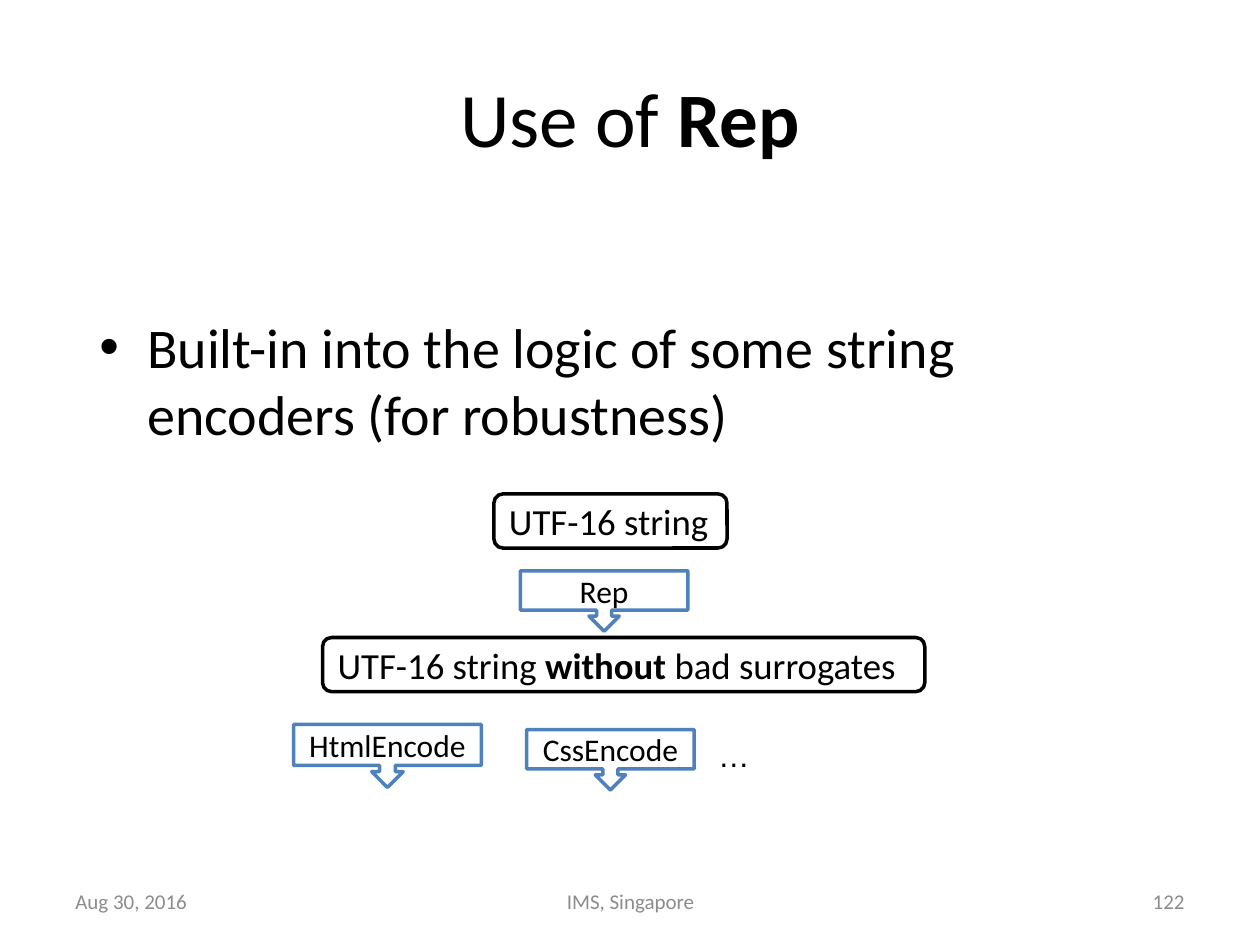
from dataclasses import dataclass

import pptx
import pptx.dml.color
import pptx.enum.shapes
import pptx.enum.text
import pptx.oxml
import pptx.oxml.ns
import pptx.util
from pptx.util import Inches

ALIGN = pptx.enum.text.PP_ALIGN
ANCHOR = pptx.enum.text.MSO_ANCHOR
SHAPE = pptx.enum.shapes.MSO_SHAPE
BLACK, GRAY, BLUE, WHITE = "000000", "8C8C8C", "4F81BD", "FFFFFF"


@dataclass
class Label:
    left: float
    top: float
    width: float
    height: float
    spans: list[tuple[str, bool]]
    size: float
    align: ALIGN = ALIGN.LEFT
    anchor: ANCHOR = ANCHOR.MIDDLE
    color: str = BLACK
    font: str = "Calibri"

    def bounds(self) -> list[pptx.util.Length]:
        return [Inches(value) for value in (self.left, self.top, self.width, self.height)]


def rgb(value: str) -> pptx.dml.color.RGBColor:
    return pptx.dml.color.RGBColor.from_string(value)


def write(box, label: Label):
    frame = box.text_frame
    frame.word_wrap = True
    frame.vertical_anchor = label.anchor
    para = frame.paragraphs[0]
    para.alignment = label.align
    para.font.name = label.font
    para.font.size = pptx.util.Pt(label.size)
    para.font.color.rgb = rgb(label.color)
    for text, bold in label.spans:
        span = para.add_run()
        span.text = text
        if bold:
            span.font.bold = True
    return para


def draw_text(page, label: Label):
    return write(page.shapes.add_textbox(*label.bounds()), label)


def draw_shape(page, kind: SHAPE, line: str, label: Label) -> None:
    box = page.shapes.add_shape(kind, *label.bounds())
    box.shadow.inherit = False
    box.fill.solid()
    box.fill.fore_color.rgb = rgb(WHITE)
    box.line.color.rgb = rgb(line)
    box.line.width = pptx.util.Pt(2)
    write(box, label)


def add_bullet(para) -> None:
    properties = para._p.get_or_add_pPr()
    properties.set("marL", str(Inches(0.38)))
    properties.set("indent", str(-Inches(0.38)))
    namespace = pptx.oxml.ns.nsdecls("a")
    bullet_xml = (f'<a:buFont {namespace} typeface="Arial"/>', f'<a:buChar {namespace} char="•"/>')
    position = list(properties).index(properties.find(pptx.oxml.ns.qn("a:defRPr")))
    for offset, xml in enumerate(bullet_xml):
        properties.insert(position + offset, pptx.oxml.parse_xml(xml))


def main() -> None:
    """Build the slide on the use of Rep in string encoders."""
    deck = pptx.Presentation()
    deck.slide_width, deck.slide_height = Inches(10), Inches(7.5)
    page = deck.slides.add_slide(deck.slide_layouts[6])

    draw_text(page, Label(0.5, 0.3, 9, 1.25, [("Use of ", False), ("Rep", True)], 44, ALIGN.CENTER))
    claim = "Built-in into the logic of some string encoders (for robustness)"
    point = draw_text(page, Label(0.69, 2.43, 8.62, 0.61, [(claim, False)], 32, anchor=ANCHOR.TOP))
    point.space_before = pptx.util.Pt(6.4)
    add_bullet(point)

    footers = [
        (0.5, 2.33, "Aug 30, 2016", ALIGN.LEFT),
        (3.42, 3.17, "IMS, Singapore", ALIGN.CENTER),
        (7.17, 2.33, "122", ALIGN.RIGHT),
    ]
    for left, width, text, align in footers:
        draw_text(page, Label(left, 6.95, width, 0.4, [(text, False)], 12, align, color=GRAY))

    strings = [
        (3.92, 3.92, 1.85, [("UTF-16 string", False)]),
        (2.56, 5.06, 4.78, [("UTF-16 string ", False), ("without", True), (" bad surrogates", False)]),
    ]
    for left, top, width, spans in strings:
        draw_shape(page, SHAPE.ROUNDED_RECTANGLE, BLACK, Label(left, top, width, 0.43, spans, 21))

    encoders = [
        (2.33, 5.75, 1.49, 0.5, "HtmlEncode"),
        (4.18, 5.79, 1.33, 0.48, "CssEncode"),
        (4.13, 4.53, 1.33, 0.48, "Rep"),
    ]
    for left, top, width, height, name in encoders:
        label = Label(left, top, width, height, [(name, False)], 18, ALIGN.CENTER)
        draw_shape(page, SHAPE.DOWN_ARROW_CALLOUT, BLUE, label)

    draw_text(page, Label(5.6, 5.79, 0.88, 0.4, [("…", False)], 18, anchor=ANCHOR.TOP, font="Arial"))
    deck.save("out.pptx")


if __name__ == "__main__":
    main()
